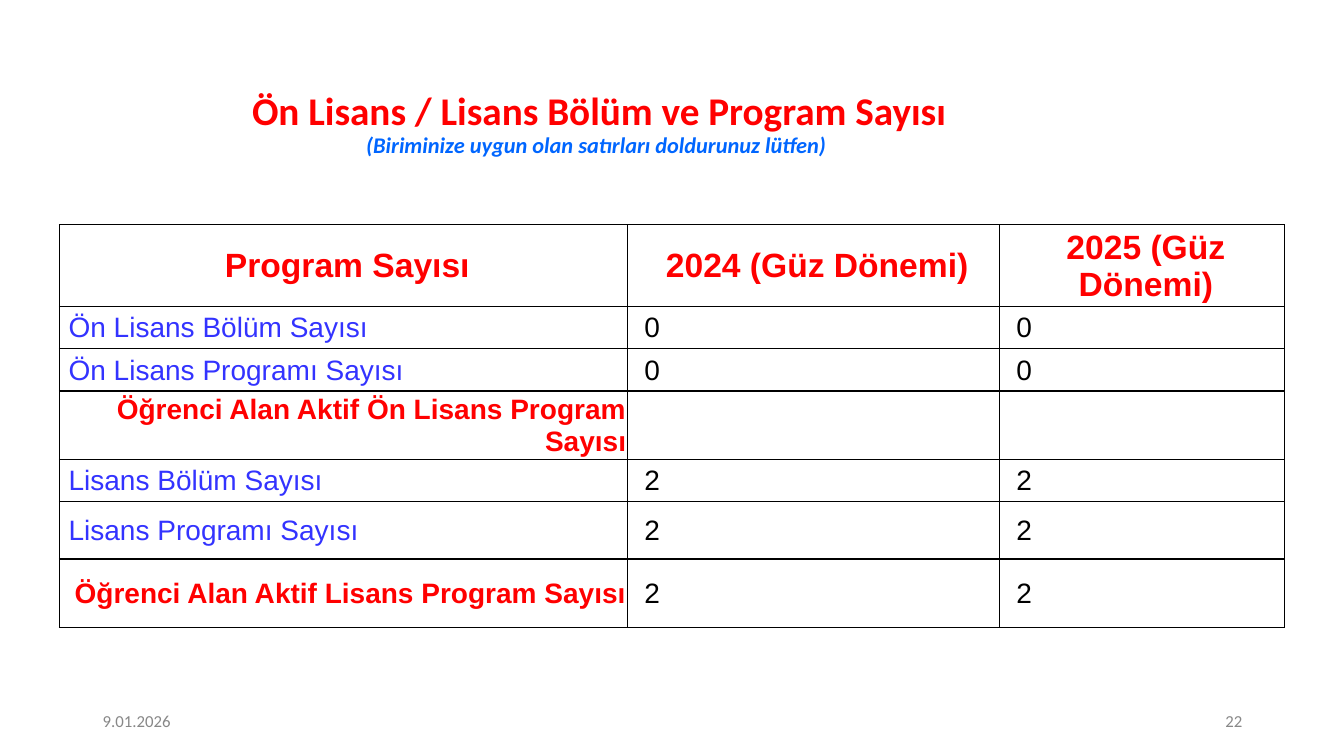
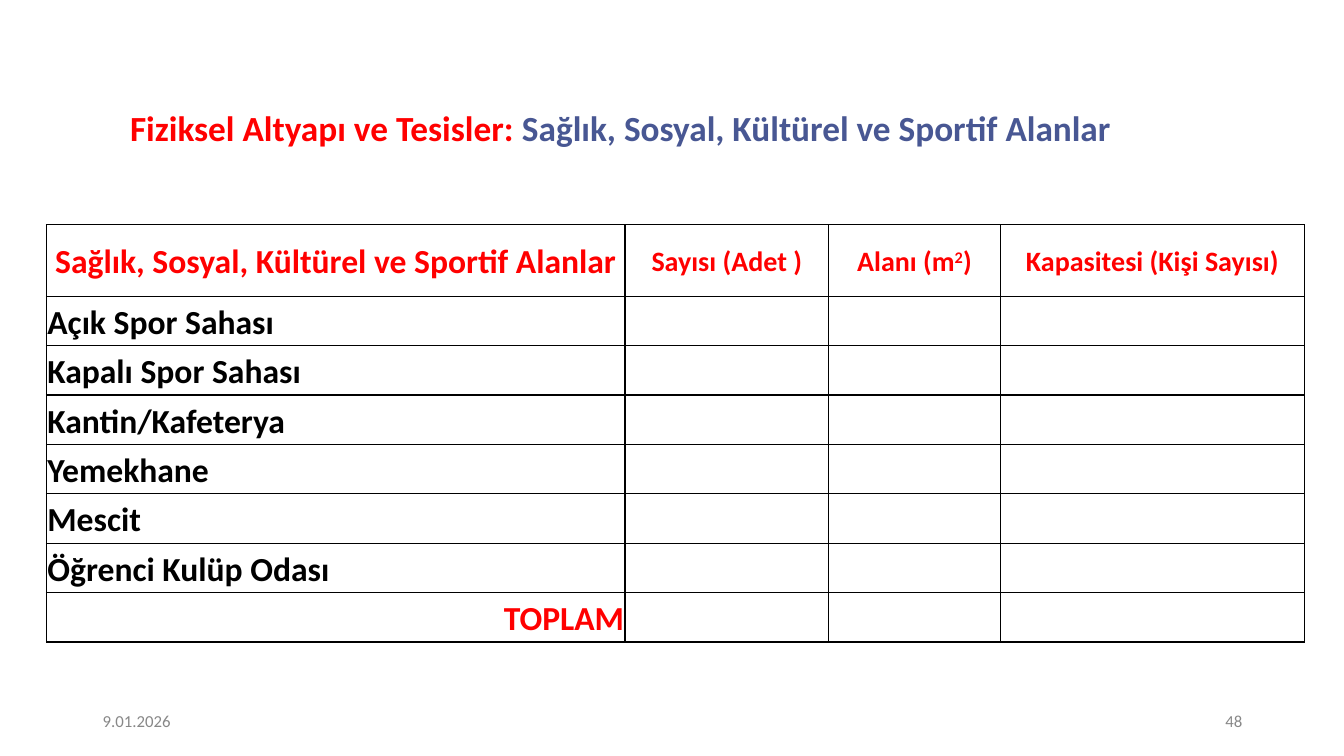
from dataclasses import dataclass

from lxml import etree
from pptx import Presentation
from pptx.dml.color import RGBColor
from pptx.enum import text as tx
from pptx.oxml import ns
from pptx.util import Inches, Pt


@dataclass(frozen=True)
class Theme:
    red: str = "FF0000"
    blue: str = "3333FF"
    sky: str = "0066FF"
    navy: str = "485793"
    black: str = "000000"
    gray: str = "888888"
    sans: str = "Calibri"
    grid: str = "Arial"
    head: float = 28
    topic: float = 25.2
    large: float = 24
    body: float = 20
    hint: float = 16
    foot: float = 12


T = Theme()
LEFT, MID, RIGHT = tx.PP_ALIGN.LEFT, tx.PP_ALIGN.CENTER, tx.PP_ALIGN.RIGHT
DATE = "9.01.2026"


def style(size, color, bold=True, italic=False, font=T.sans):
    return dict(size=size, color=color, bold=bold, italic=italic, font=font)


HEAD = style(T.large, T.red, font=T.grid)
LABEL = style(T.body, T.blue, False, font=T.grid)
VALUE = style(T.body, T.black, False, font=T.grid)
TOTAL = style(T.body, T.red, font=T.grid)
AREA = style(T.large, T.red)
UNIT = style(T.body, T.red)
PLACE = style(T.large, T.black)
FOOT = style(T.foot, T.gray, False)

COUNTS = [
    ("Ön Lisans Bölüm Sayısı", "0", "0"),
    ("Ön Lisans Programı Sayısı", "0", "0"),
    ("Öğrenci Alan Aktif Ön Lisans Program Sayısı", "", ""),
    ("Lisans Bölüm Sayısı", "2", "2"),
    ("Lisans Programı Sayısı", "2", "2"),
    ("Öğrenci Alan Aktif Lisans Program Sayısı", "2", "2"),
]
SUMS = (2, 5)
PLACES = ["Açık Spor Sahası", "Kapalı Spor Sahası", "Kantin/Kafeterya",
          "Yemekhane", "Mescit", "Öğrenci Kulüp Odası"]
AREAS = "Sağlık, Sosyal, Kültürel ve Sportif Alanlar"


def cell(text, look, align=LEFT, indent=0):
    parts = text if isinstance(text, list) else [text]
    return [(part, look) for part in parts], align, indent


def count_row(i, row):
    name, *nums = row
    first = cell(name, TOTAL, RIGHT, 0.08) if i in SUMS else cell(name, LABEL, LEFT, 0.08)
    return [first] + [cell(num, VALUE, LEFT, 0.16) for num in nums]


def place_row(first):
    return [first] + [cell("", UNIT)] * 3


SLIDES = [
    dict(
        page="22", title=(0.14, 0.84, 11.6, 0.8),
        lines=[
            [("Ön Lisans / Lisans Bölüm ve Program Sayısı", style(T.head, T.red))],
            [("(Biriminize uygun olan satırları doldurunuz lütfen) ",
              style(T.hint, T.sky, italic=True))],
        ],
        at=(0.59, 2.23), cols=[5.63, 3.69, 2.83],
        rows=[0.48] + [0.42] * 4 + [0.57, 0.68], space=None,
        cells=[[cell(name, HEAD, MID, 0.08) for name in
                ("Program Sayısı", "2024 (Güz Dönemi)", "2025 (Güz Dönemi)")]]
        + [count_row(i, row) for i, row in enumerate(COUNTS)],
    ),
    dict(
        page="48", title=(0.61, 0.94, 11.09, 0.7),
        lines=[[("Fiziksel Altyapı ve Tesisler: ", style(T.topic, T.red)),
                (AREAS, style(T.topic, T.navy))]],
        at=(0.46, 2.23), cols=[5.74, 2.02, 1.7, 3.02],
        rows=[0.71] + [0.49] * 7, space=1.07,
        cells=[[cell(AREAS, AREA, MID)]
               + [cell(name, UNIT, MID) for name in
                  ("Sayısı (Adet )", ["Alanı (m", "2", ")"], "Kapasitesi (Kişi Sayısı)")]]
        + [place_row(cell(name, PLACE)) for name in PLACES]
        + [place_row(cell("TOPLAM", AREA, RIGHT))],
    ),
]


def dress(font, look):
    font.name, font.size = look["font"], Pt(look["size"])
    font.bold, font.italic = look["bold"], look["italic"]
    font.color.rgb = RGBColor.from_string(look["color"])


def write(par, parts, align, space=None):
    par.alignment = align
    if space:
        par.line_spacing = space
    for text, look in parts:
        if text:
            run = par.add_run()
            run.text = text
            dress(run.font, look)
        else:
            dress(par.font, look)


def add_title(slide, box, lines):
    title = slide.shapes.title
    title.left, title.top, title.width, title.height = map(Inches, box)
    frame = title.text_frame
    frame.word_wrap = True
    frame.auto_size = tx.MSO_AUTO_SIZE.NONE
    frame.vertical_anchor = tx.MSO_ANCHOR.MIDDLE
    for i, parts in enumerate(lines):
        par = frame.add_paragraph() if i else frame.paragraphs[0]
        write(par, parts, MID, 0.9)


def add_foot(slide, page):
    for left, text, align in ((0.92, DATE, LEFT), (9.42, page, RIGHT)):
        box = slide.shapes.add_textbox(*map(Inches, (left, 6.95, 3, 0.4)))
        frame = box.text_frame
        frame.word_wrap = True
        frame.vertical_anchor = tx.MSO_ANCHOR.MIDDLE
        write(frame.paragraphs[0], [(text, FOOT)], align)


def add_edges(box):
    props = box._tc.get_or_add_tcPr()
    for i, side in enumerate(("lnL", "lnR", "lnT", "lnB")):
        line = etree.Element(ns.qn("a:" + side), w=str(Pt(1)))
        fill = etree.SubElement(line, ns.qn("a:solidFill"))
        etree.SubElement(fill, ns.qn("a:srgbClr"), val=T.black)
        props.insert(i, line)


def fill_cell(box, data, space):
    parts, align, indent = data
    box.fill.background()
    box.vertical_anchor = tx.MSO_ANCHOR.MIDDLE
    box.margin_left = box.margin_right = box.margin_top = Inches(0.01)
    box.margin_bottom = 0
    add_edges(box)
    par = box.text_frame.paragraphs[0]
    write(par, parts, align, space)
    if indent:
        par._p.get_or_add_pPr().set("marL", str(Inches(indent)))
    if len(par.runs) == 3:
        par.runs[1].font._element.set("baseline", "30000")


def add_grid(slide, at, cols, rows, cells, space):
    size = (*at, sum(cols), sum(rows))
    table = slide.shapes.add_table(len(rows), len(cols), *map(Inches, size)).table
    table.first_row = table.horz_banding = False
    for col, width in zip(table.columns, cols):
        col.width = Inches(width)
    for row, height, line in zip(table.rows, rows, cells):
        row.height = Inches(height)
        for box, data in zip(row.cells, line):
            fill_cell(box, data, space)


def main():
    deck = Presentation()
    deck.slide_width, deck.slide_height = Inches(13.33), Inches(7.5)
    for page in SLIDES:
        slide = deck.slides.add_slide(deck.slide_layouts[5])
        add_title(slide, page["title"], page["lines"])
        add_foot(slide, page["page"])
        add_grid(slide, page["at"], page["cols"], page["rows"],
                 page["cells"], page["space"])
    deck.save("out.pptx")


if __name__ == "__main__":
    main()
